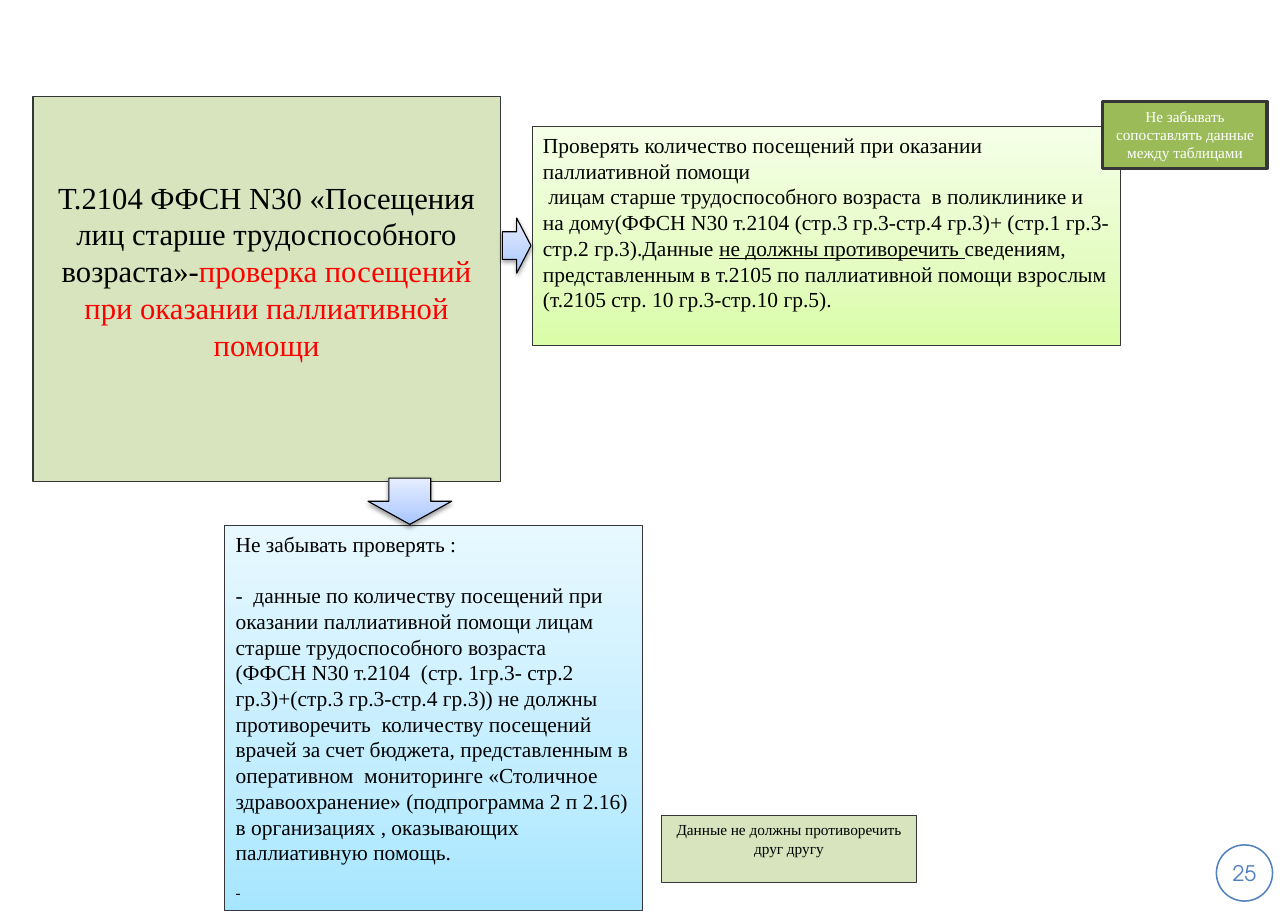
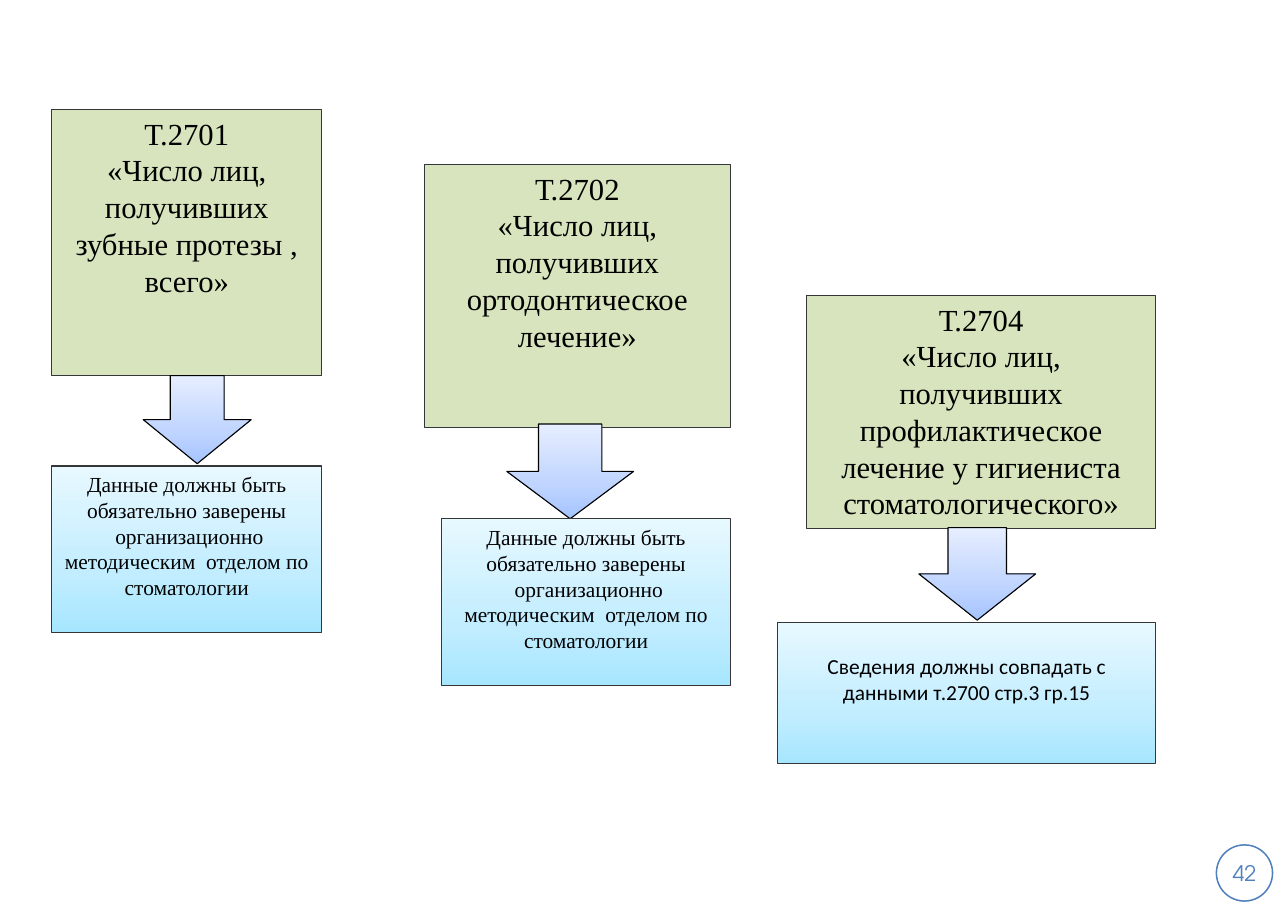
import dataclasses

import lxml.etree
import pptx
import pptx.dml.color
import pptx.enum.shapes
import pptx.enum.text
import pptx.oxml.ns
import pptx.util

Inches = pptx.util.Inches
Pt = pptx.util.Pt
SHAPE = pptx.enum.shapes.MSO_SHAPE
ALIGN = pptx.enum.text.PP_ALIGN
ANCHOR = pptx.enum.text.MSO_ANCHOR
qn = pptx.oxml.ns.qn


@dataclasses.dataclass(frozen=True)
class Theme:
    serif: str = "Times New Roman"
    sans: str = "Calibri"
    number_font: str = "TeX Gyre Adventor"
    heading: float = 20
    body: float = 14
    small: float = 10
    black: str = "000000"
    white: str = "FFFFFF"
    red: str = "FF0000"
    border: str = "363537"
    accent: str = "4F81BD"
    olive: str = "D7E4BD"
    green: str = "9BBB59"
    # Gradients run from the bottom edge to the top edge.
    lime: tuple = ((0, "DAFDA7"), (35, "E4FCC2"), (100, "F5FFE7"))
    sky: tuple = ((0, "A7E6FF"), (35, "C1EDFF"), (100, "E7F8FF"))
    arrow: tuple = ((0, "A4C4FF"), (35, "BFD4FF"), (100, "E6EEFF"))


T = Theme()


def rgb(value):
    return pptx.dml.color.RGBColor.from_string(value)


def add_child(parent, tag, **attributes):
    return lxml.etree.SubElement(parent, qn(tag), {k: str(v) for k, v in attributes.items()})


def set_fill(sp, fill):
    """Apply no fill (None), a solid colour (str) or gradient stops (tuple)."""
    if fill is None:
        sp.fill.background()
    elif isinstance(fill, str):
        sp.fill.solid()
        sp.fill.fore_color.rgb = rgb(fill)
    else:
        sp.fill.gradient()
        sp.fill.gradient_angle = 90
        stops = sp._element.spPr.find(qn("a:gradFill")).find(qn("a:gsLst"))
        for stop in list(stops):
            stops.remove(stop)
        for position, color in fill:
            add_child(add_child(stops, "a:gs", pos=position * 1000), "a:srgbClr", val=color)


def add_box(slide, box, fill, kind=SHAPE.RECTANGLE, line=T.border, width=0.75):
    sp = slide.shapes.add_shape(kind, *(Inches(v) for v in box))
    sp.shadow.inherit = False
    set_fill(sp, fill)
    sp.line.color.rgb = rgb(line)
    sp.line.width = Pt(width)
    return sp


def write(sp, paragraphs, size=T.body, font=T.serif, color=T.black, align=ALIGN.CENTER,
          anchor=ANCHOR.TOP, insets=(0.1, 0.05, 0.1, 0.05)):
    """Fill a shape with paragraphs: a string, or a list of (text, run format) pairs."""
    tf = sp.text_frame
    tf.word_wrap = True
    tf.vertical_anchor = anchor
    tf.margin_left, tf.margin_top, tf.margin_right, tf.margin_bottom = map(Inches, insets)
    for i, runs in enumerate(paragraphs):
        p = tf.paragraphs[0] if i == 0 else tf.add_paragraph()
        p.alignment = align
        for text, style in [(runs, {})] if isinstance(runs, str) else runs:
            r = p.add_run()
            r.text = text
            r.font.name = font
            r.font.size = Pt(style.get("size", size))
            r.font.color.rgb = rgb(style.get("color", color))
            if style.get("underline"):
                r.font.underline = True
    return tf


def add_arrow(slide, box, kind=SHAPE.DOWN_ARROW, shadow=False):
    sp = add_box(slide, box, T.arrow, kind, line=T.black)
    if shadow:
        effects = sp._element.spPr.find(qn("a:effectLst"))
        outer = add_child(effects, "a:outerShdw", blurRad=Pt(3.1), dist=Pt(1.6),
                          dir=90 * 60000, rotWithShape=0)
        add_child(add_child(outer, "a:srgbClr", val=T.black), "a:alpha", val=38000)


def add_page_number(slide, number):
    sp = add_box(slide, (11.04, 7.67, 0.51, 0.51), None, SHAPE.OVAL, line=T.accent, width=1)
    write(sp, [str(number)], font=T.number_font, color=T.accent, anchor=ANCHOR.MIDDLE,
          insets=(0, 0, 0, 0))


def new_slide(prs, number):
    slide = prs.slides.add_slide(prs.slide_layouts[6])
    add_page_number(slide, number)
    return slide


def build_palliative_slide(prs):
    slide = new_slide(prs, 25)

    topic = add_box(slide, (0.3, 0.88, 4.24, 3.49), T.olive)
    write(topic, [[
        ("Т.2104 ФФСН N30 «Посещения лиц старше трудоспособного возраста»-", {}),
        ("проверка посещений при оказании паллиативной помощи", {"color": T.red}),
    ]], size=T.heading, insets=(0.1, 0.74, 0.1, 0.05))

    rule = add_box(slide, (4.83, 1.15, 5.34, 1.99), T.lime)
    write(rule, [
        "Проверять количество посещений при оказании паллиативной помощи",
        [(" лицам старше трудоспособного возраста  в поликлинике и на дому(ФФСН N30 т.2104 "
          "(стр.3 гр.3-стр.4 гр.3)+ (стр.1 гр.3-стр.2 гр.3).Данные ", {}),
         ("не должны противоречить ", {"underline": True}),
         ("сведениям, представленным в т.2105 по паллиативной помощи взрослым "
          "(т.2105 стр. 10 гр.3-стр.10 гр.5).", {})],
    ], align=ALIGN.LEFT)

    reminder = add_box(slide, (10.01, 0.92, 1.49, 0.61), T.green, width=2)
    write(reminder, ["Не забывать сопоставлять данные между таблицами"],
          size=T.small, color=T.white)

    checks = add_box(slide, (2.04, 4.77, 3.79, 3.5), T.sky)
    tf = write(checks, [
        "Не забывать проверять :",
        "-  данные по количеству посещений при оказании паллиативной помощи лицам старше "
        "трудоспособного возраста",
        "(ФФСН N30 т.2104  (стр. 1гр.3- стр.2 гр.3)+(стр.3 гр.3-стр.4 гр.3)) не должны "
        "противоречить  количеству посещений врачей за счет бюджета, представленным в "
        "оперативном  мониторинге «Столичное здравоохранение» (подпрограмма 2 п 2.16) "
        "в организациях , оказывающих  паллиативную помощь.",
        [("-", {"size": T.small})],
    ], align=ALIGN.LEFT)
    tf.paragraphs[1].space_before = Pt(16.8)
    tf.paragraphs[3].space_before = Pt(12)

    conclusion = add_box(slide, (6, 7.4, 2.32, 0.61), T.olive)
    write(conclusion, ["Данные не должны противоречить", "друг другу"], size=T.small)

    add_arrow(slide, (4.56, 1.98, 0.26, 0.5), SHAPE.RIGHT_ARROW, shadow=True)
    add_arrow(slide, (3.34, 4.34, 0.76, 0.42), shadow=True)


def add_table_check(slide, table_box, arrow_box, note_box, table, note, **note_format):
    """Place a table heading, the arrow below it and the note it leads to."""
    write(add_box(slide, table_box, T.olive), table, size=T.heading)
    add_arrow(slide, arrow_box)
    write(add_box(slide, note_box, T.sky), note, **note_format)


def build_dental_slide(prs):
    slide = new_slide(prs, 42)
    certified = ["Данные должны быть обязательно заверены", " организационно",
                 "методическим  отделом по стоматологии"]
    add_table_check(
        slide, (0.47, 0.99, 2.45, 2.42), (1.3, 3.41, 0.98, 0.8), (0.47, 4.23, 2.45, 1.51),
        ["Т.2701", "«Число лиц, получивших зубные протезы , всего»"], certified)
    add_table_check(
        slide, (3.85, 1.49, 2.78, 2.39), (4.6, 3.85, 1.15, 0.86), (4.01, 4.71, 2.62, 1.51),
        ["Т.2702", "«Число лиц, получивших ортодонтическое лечение»"], certified)
    add_table_check(
        slide, (7.32, 2.68, 3.17, 2.12), (8.34, 4.79, 1.06, 0.84), (7.06, 5.65, 3.43, 1.28),
        ["Т.2704", "«Число лиц, получивших профилактическое лечение у гигиениста "
                   "стоматологического»"],
        ["Сведения должны совпадать с данными т.2700 стр.3 гр.15"],
        font=T.sans, insets=(0.1, 0.28, 0.1, 0.05))


def main():
    prs = pptx.Presentation()
    prs.slide_width, prs.slide_height = Inches(11.69), Inches(8.27)
    build_palliative_slide(prs)
    build_dental_slide(prs)
    prs.save("out.pptx")


if __name__ == "__main__":
    main()
